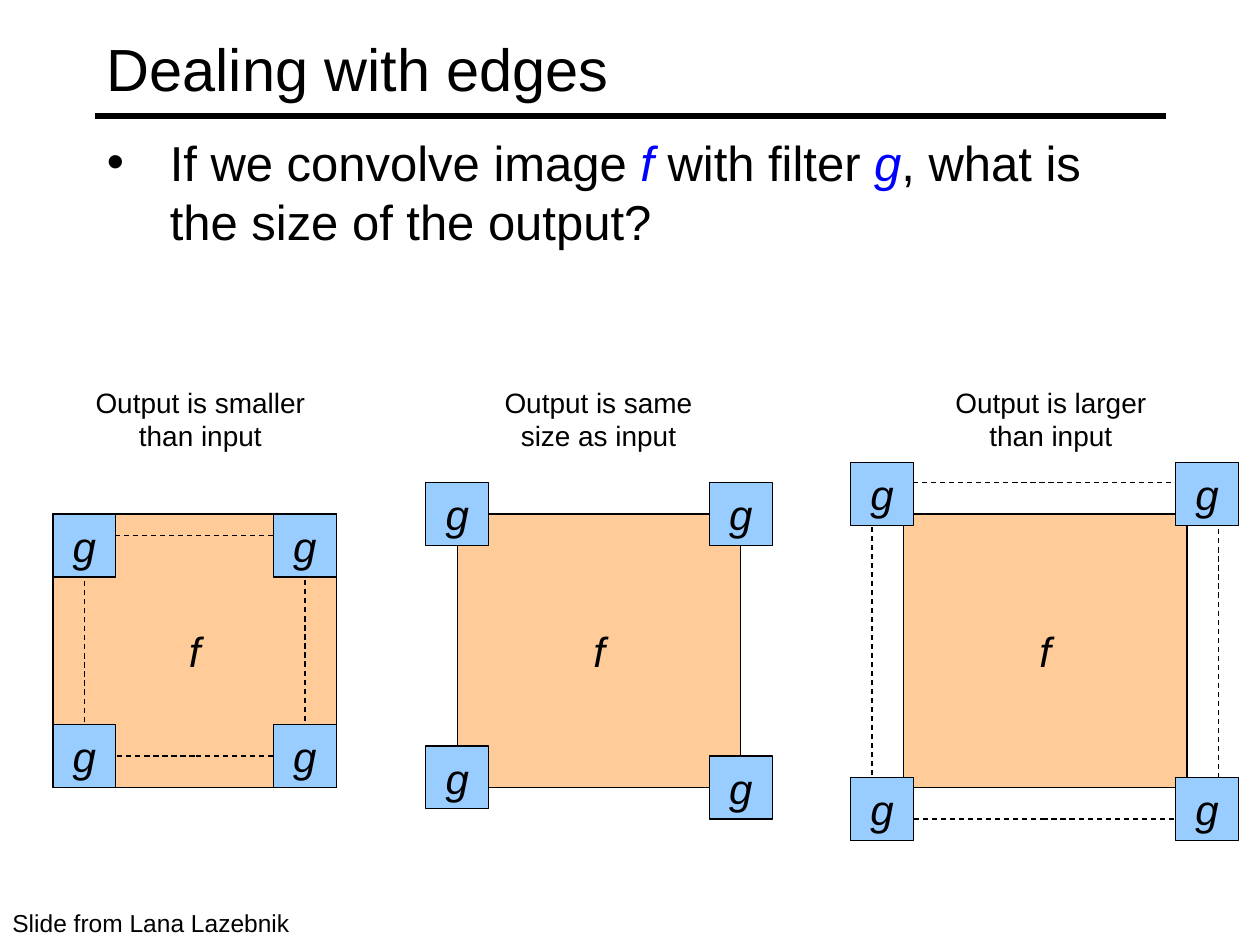
import pptx
import pptx.util
import pptx.dml.color
import pptx.enum.dml
import pptx.enum.shapes
import pptx.enum.text
import pptx.oxml.ns
import lxml.etree

Inches = pptx.util.Inches
Pt = pptx.util.Pt
RGBColor = pptx.dml.color.RGBColor
Align = pptx.enum.text.PP_ALIGN
Anchor = pptx.enum.text.MSO_ANCHOR
qn = pptx.oxml.ns.qn

BLACK = RGBColor(0x00, 0x00, 0x00)
WHITE = RGBColor(0xFF, 0xFF, 0xFF)
BLUE = RGBColor(0x00, 0x00, 0xFF)
SKY = RGBColor(0x99, 0xCC, 0xFF)
PEACH = RGBColor(0xFF, 0xCC, 0x99)


def write(shape, *runs, size, align=Align.LEFT, anchor=Anchor.TOP, wrap=True, slant=False):
    frame = shape.text_frame
    frame.word_wrap = wrap
    frame.vertical_anchor = anchor
    line = frame.paragraphs[0]
    line.alignment = align
    for text, color in runs:
        run = line.add_run()
        run.text = text
        run.font.name = "Arial"
        run.font.size = Pt(size)
        run.font.italic = slant or color == BLUE
        run.font.color.rgb = color
    return line


def box(left, top, width, height, fill=None, label=None):
    shape = slide.shapes.add_shape(
        pptx.enum.shapes.MSO_SHAPE.RECTANGLE,
        Inches(left), Inches(top), Inches(width), Inches(height))
    shape.shadow.inherit = False
    if fill is None:
        shape.fill.background()
    else:
        shape.fill.solid()
        shape.fill.fore_color.rgb = fill
    shape.line.color.rgb = BLACK
    shape.line.width = Pt(0.75)
    if label:
        write(shape, (label, BLACK), size=24, align=Align.CENTER,
              anchor=Anchor.MIDDLE, wrap=False, slant=True)
    else:
        shape.line.dash_style = pptx.enum.dml.MSO_LINE.DASH


deck = pptx.Presentation()
deck.slide_width = Inches(10)
deck.slide_height = Inches(7.5)
slide = deck.slides.add_slide(deck.slide_layouts[6])

rule = slide.shapes.add_connector(
    pptx.enum.shapes.MSO_CONNECTOR.STRAIGHT,
    Inches(0.75), Inches(0.92), Inches(9.25), Inches(0.92))
rule.line.color.rgb = BLACK
rule.line.width = Pt(3)
lxml.etree.SubElement(rule._element.spPr, qn("a:effectLst"))

title = slide.shapes.add_textbox(Inches(0.75), Inches(0.08), Inches(8.5), Inches(0.92))
write(title, ("Dealing with edges", BLACK), size=34, anchor=Anchor.MIDDLE)

body = slide.shapes.add_textbox(Inches(0.75), Inches(1), Inches(8.5), Inches(5.75))
point = write(body, ("If we convolve image ", BLACK), ("f", BLUE), (" with filter ", BLACK),
              ("g", BLUE), (", what is the size of the output?", BLACK), size=28)
point.space_before = Pt(5.6)
props = point._p.get_or_add_pPr()
props.set("marL", str(Inches(0.5)))
props.set("indent", str(-Inches(0.5)))
font = lxml.etree.SubElement(props, qn("a:buFont"))
font.set("typeface", "Arial")
mark = lxml.etree.SubElement(props, qn("a:buChar"))
mark.set("char", "•")

box(6.92, 3.83, 2.75, 2.67, fill=WHITE)

cases = [
    ("Output is smaller than input", 0.55, 0.42,
     [(0.42, 4.08), (2.17, 4.08), (0.42, 5.75), (2.17, 5.75)]),
    ("Output is same size as input", 3.71, 3.63,
     [(3.38, 3.83), (5.63, 3.83), (3.38, 5.92), (5.63, 6)]),
    ("Output is larger than input", 7.3, 7.17,
     [(6.75, 3.67), (9.33, 3.67), (6.75, 6.17), (9.33, 6.17)]),
]
for index, (text, start, left, spots) in enumerate(cases):
    box(left, 4.08, 2.25, 2.17, fill=PEACH, label="f")
    if index == 0:
        box(0.67, 4.25, 1.75, 1.75)
    for x, y in spots:
        box(x, y, 0.5, 0.5, fill=SKY, label="g")
    head = slide.shapes.add_textbox(Inches(start), Inches(3.01), Inches(2.08), Inches(0.64))
    write(head, (text, BLACK), size=16, align=Align.CENTER)

credit = slide.shapes.add_textbox(Inches(0), Inches(7.16), Inches(2.41), Inches(0.34))
write(credit, ("Slide from Lana Lazebnik", BLACK), size=14, wrap=False)

deck.save("out.pptx")
